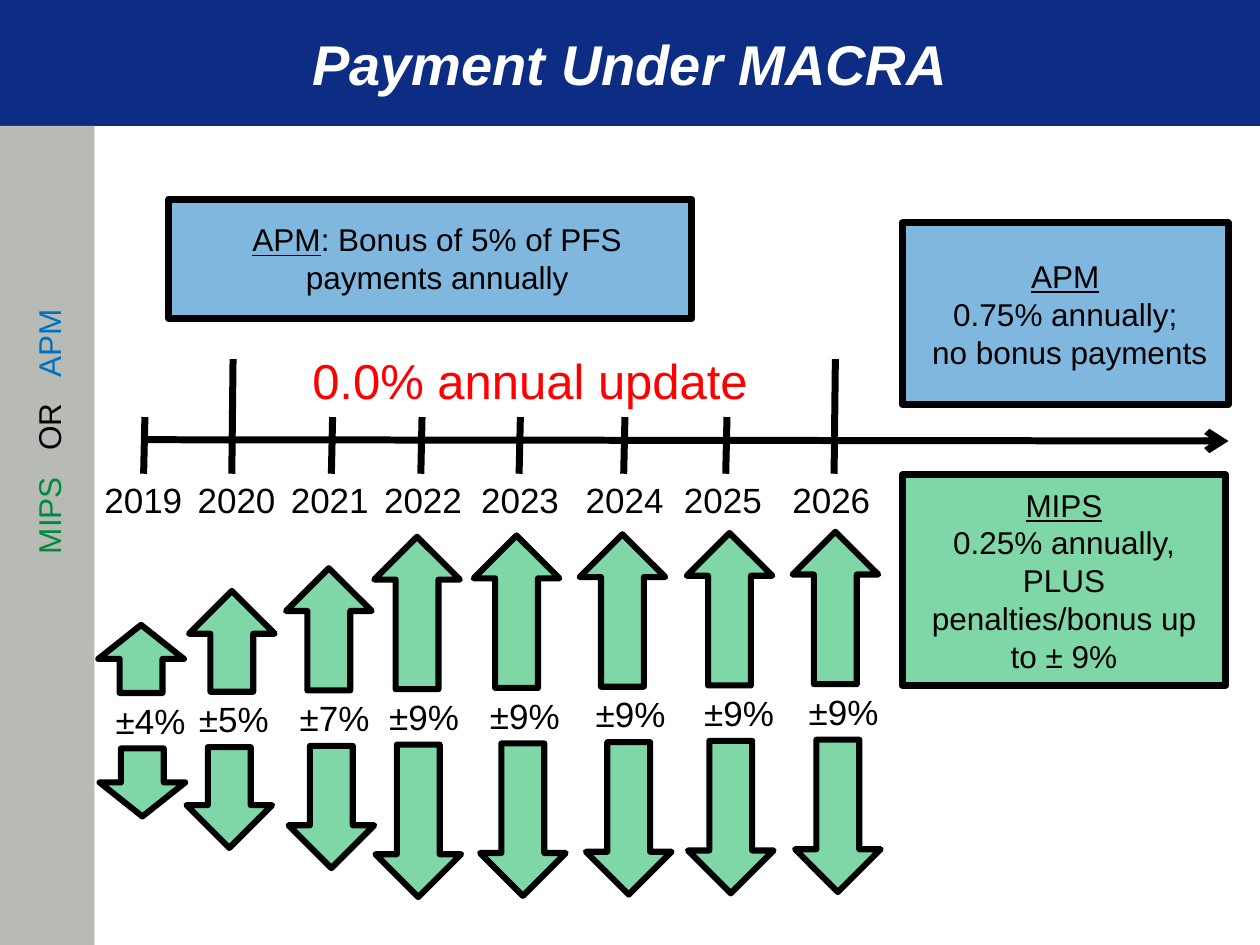
from dataclasses import dataclass
from lxml.etree import SubElement
from pptx import Presentation
from pptx.dml.color import RGBColor
from pptx.enum.shapes import MSO_CONNECTOR, MSO_SHAPE
from pptx.enum.text import MSO_ANCHOR, PP_ALIGN
from pptx.oxml.ns import qn
from pptx.util import Inches, Pt


@dataclass(frozen=True)
class Theme:
    """Holds the colours, type sizes and line widths."""
    face: str = "Arial"
    navy: str = "0C2D83"
    gray: str = "B7BAB5"
    blue: str = "0070C0"
    green: str = "00B050"
    leaf: str = "008A3E"
    red: str = "FF0000"
    black: str = "000000"
    white: str = "FFFFFF"
    title: int = 32
    lead: int = 28
    label: int = 20
    body: int = 18
    rule: float = 4
    edge: float = 3.5


@dataclass(frozen=True)
class Box:
    """Is an area in columns and rows of a 10 by 7.5 grid."""
    x: float
    y: float
    w: float
    h: float

    def inner(self, x, y, w, h):
        """Return an area placed relative to this one."""
        return Box(self.x + x, self.y + y, w, h)

    def place(self):
        """Return left, top, width and height as lengths."""
        return [Inches(n) for n in (self.x, self.y, self.w, self.h)]


@dataclass(frozen=True)
class Year:
    """Holds one year's rate and the columns of its marks."""
    name: int
    rate: int
    tick: float
    date: float
    rise: float
    share: float
    fall: float


THEME = Theme()
YEARS = [
    Year(2019, 4, 0.45, 0.03, 0.08, 0.12, 0.09),
    Year(2020, 5, 1.15, 0.77, 0.8, 0.78, 0.78),
    Year(2021, 7, 1.94, 1.51, 1.57, 1.58, 1.59),
    Year(2022, 9, 2.65, 2.25, 2.27, 2.29, 2.28),
    Year(2023, 9, 3.43, 3.02, 3.06, 3.09, 3.11),
    Year(2024, 9, 4.26, 3.85, 3.9, 3.93, 3.95),
    Year(2025, 9, 5.07, 4.63, 4.75, 4.79, 4.76),
    Year(2026, 9, 5.93, 5.49, 5.59, 5.62, 5.61),
]
TALL = {2020, 2026}
LENGTHS = {4: 0.54, 5: 0.8, 7: 0.97, 9: 1.21}


def style(para, size, color, align=PP_ALIGN.LEFT):
    """Format the runs of a paragraph."""
    para.alignment = align
    for run in para.runs:
        font = run.font
        font.name, font.size = THEME.face, Pt(size)
        font.color.rgb = RGBColor.from_string(color)


def shape(slide, kind, box, color, width=0):
    """Draw a shape, half clear when it has an outline."""
    item = slide.shapes.add_shape(kind, *box.place())
    item.shadow.inherit = False
    item.fill.solid()
    item.fill.fore_color.rgb = RGBColor.from_string(color)
    if width:
        tint = item.element.spPr.find(".//" + qn("a:srgbClr"))
        SubElement(tint, qn("a:alpha"), val="50000")
        item.line.color.rgb = RGBColor.from_string(THEME.black)
        item.line.width = Pt(width)
    else:
        item.line.fill.background()
    return item


def label(slide, box, text, size, color=THEME.black, align=PP_ALIGN.LEFT):
    """Write a wrapped text box and return it."""
    item = slide.shapes.add_textbox(*box.place())
    item.text_frame.word_wrap = True
    item.text_frame.text = text
    style(item.text_frame.paragraphs[0], size, color, align)
    return item


def line(slide, start, end, arrow=False):
    """Draw a straight rule, with an arrowhead if asked."""
    ends = [Inches(n) for n in (*start, *end)]
    item = slide.shapes.add_connector(MSO_CONNECTOR.STRAIGHT, *ends)
    item.line.color.rgb = RGBColor.from_string(THEME.black)
    item.line.width = Pt(THEME.rule)
    props = item.element.spPr
    if arrow:
        SubElement(props.find(qn("a:ln")), qn("a:tailEnd"), type="arrow")
    SubElement(props, qn("a:effectLst"))


def header(slide, box):
    """Fill the title band."""
    title = slide.shapes.title
    title.left, title.top, title.width, title.height = box.place()
    title.fill.solid()
    title.fill.fore_color.rgb = RGBColor.from_string(THEME.navy)
    frame = title.text_frame
    frame.text = "Payment Under MACRA"
    frame.vertical_anchor = MSO_ANCHOR.MIDDLE
    para = frame.paragraphs[0]
    style(para, THEME.title, THEME.white, PP_ALIGN.CENTER)
    para.runs[0].font.bold = para.runs[0].font.italic = True


def sidebar(slide, box):
    """Draw the side band with its upright caption."""
    shape(slide, MSO_SHAPE.RECTANGLE, box, THEME.gray)
    item = label(slide, box.inner(-1.07, 1.84, 2.91, 0.4), "MIPS", THEME.body)
    item.rotation = 270
    para = item.text_frame.paragraphs[0]
    stops = SubElement(para._p.get_or_add_pPr(), qn("a:tabLst"))
    for stop in (0.82, 1.4):
        SubElement(stops, qn("a:tab"), pos=str(Inches(stop)), algn="l")
    for text in ("\tOR", "\tAPM"):
        para.add_run().text = text
    style(para, THEME.body, THEME.black)
    for run, color in zip(para.runs, (THEME.leaf, THEME.black, THEME.blue)):
        run.font.color.rgb = RGBColor.from_string(color)


def bonus(slide, box):
    """Draw the bonus card and its text."""
    shape(slide, MSO_SHAPE.RECTANGLE, box, THEME.blue, THEME.rule)
    area = box.inner(0.16, 0.12, 3.94, 0.64)
    para = label(slide, area, "APM", THEME.body).text_frame.paragraphs[0]
    para.add_run().text = ": Bonus of 5% of PFS payments annually"
    style(para, THEME.body, THEME.black, PP_ALIGN.CENTER)
    para.runs[0].font.underline = True


def card(slide, box, color, text):
    """Draw a card whose first line is underlined."""
    frame = shape(slide, MSO_SHAPE.RECTANGLE, box, color, THEME.rule).text_frame
    frame.word_wrap = True
    frame.vertical_anchor = MSO_ANCHOR.MIDDLE
    para = frame.paragraphs[0]
    para.text = text
    style(para, THEME.body, THEME.black, PP_ALIGN.CENTER)
    para.runs[0].font.underline = True


def axis(slide, box):
    """Draw the time line, its ticks and its years."""
    label(slide, box.inner(1.68, -0.07, 3.89, 0.57), "0.0% annual update",
          THEME.lead, THEME.red)
    line(slide, (box.x + 0.45, box.y + 0.69), (box.x + box.w, box.y + 0.7), True)
    for year in YEARS:
        x, top = box.x + year.tick, 0.05 if year.name in TALL else 0.51
        line(slide, (x, box.y + top), (x - 0.01, box.y + 0.96))
        label(slide, box.inner(year.date, 0.95, 1.1, 0.44), str(year.name), THEME.label)


def rates(slide, box):
    """Draw each year's rate between its two arrows."""
    high, wide = 0.44, 0.68
    for step, year in enumerate(YEARS):
        size = LENGTHS[year.rate]
        top = 1.25 - step * 0.01
        label(slide, box.inner(year.share, top, 0.97, high), f"±{year.rate}%", THEME.label)
        for kind, x, y in ((MSO_SHAPE.UP_ARROW, year.rise, top - size),
                           (MSO_SHAPE.DOWN_ARROW, year.fall, top + high)):
            shape(slide, kind, box.inner(x, y, wide, size), THEME.green, THEME.edge)


def main():
    """Build and save the slide."""
    deck = Presentation()
    deck.slide_width, deck.slide_height = Inches(10), Inches(7.5)
    slide = deck.slides.add_slide(deck.slide_layouts[5])
    header(slide, Box(0, 0, 10, 1))
    sidebar(slide, Box(0, 1, 0.75, 6.5))
    bonus(slide, Box(1.34, 1.58, 4.15, 0.95))
    card(slide, Box(7.16, 1.77, 2.59, 1.44), THEME.blue,
         "APM\v0.75% annually;\v no bonus payments")
    card(slide, Box(7.16, 3.77, 2.57, 1.67), THEME.green,
         "MIPS\v0.25% annually, PLUS penalties/bonus up to ± 9%")
    axis(slide, Box(0.7, 2.8, 9.05, 1.4))
    rates(slide, Box(0.7, 4.25, 6.3, 2.9))
    deck.save("out.pptx")


if __name__ == "__main__":
    main()
